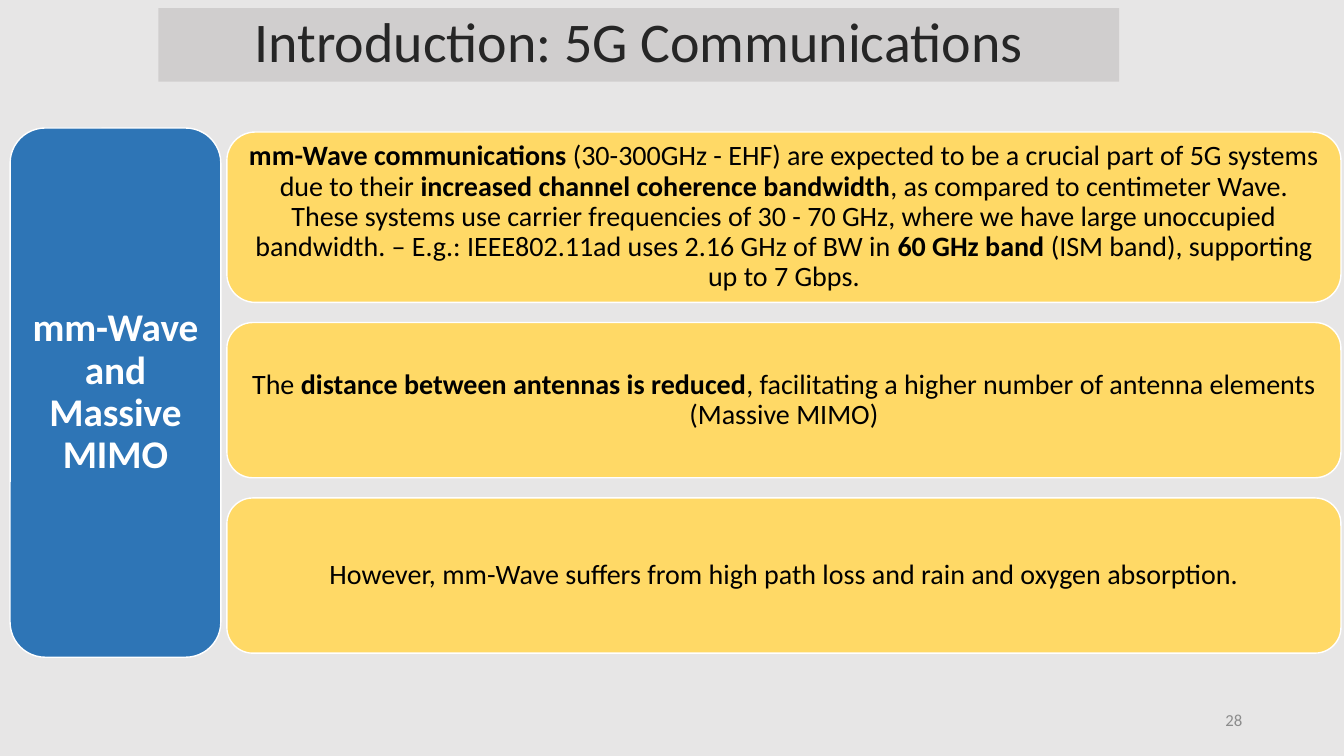
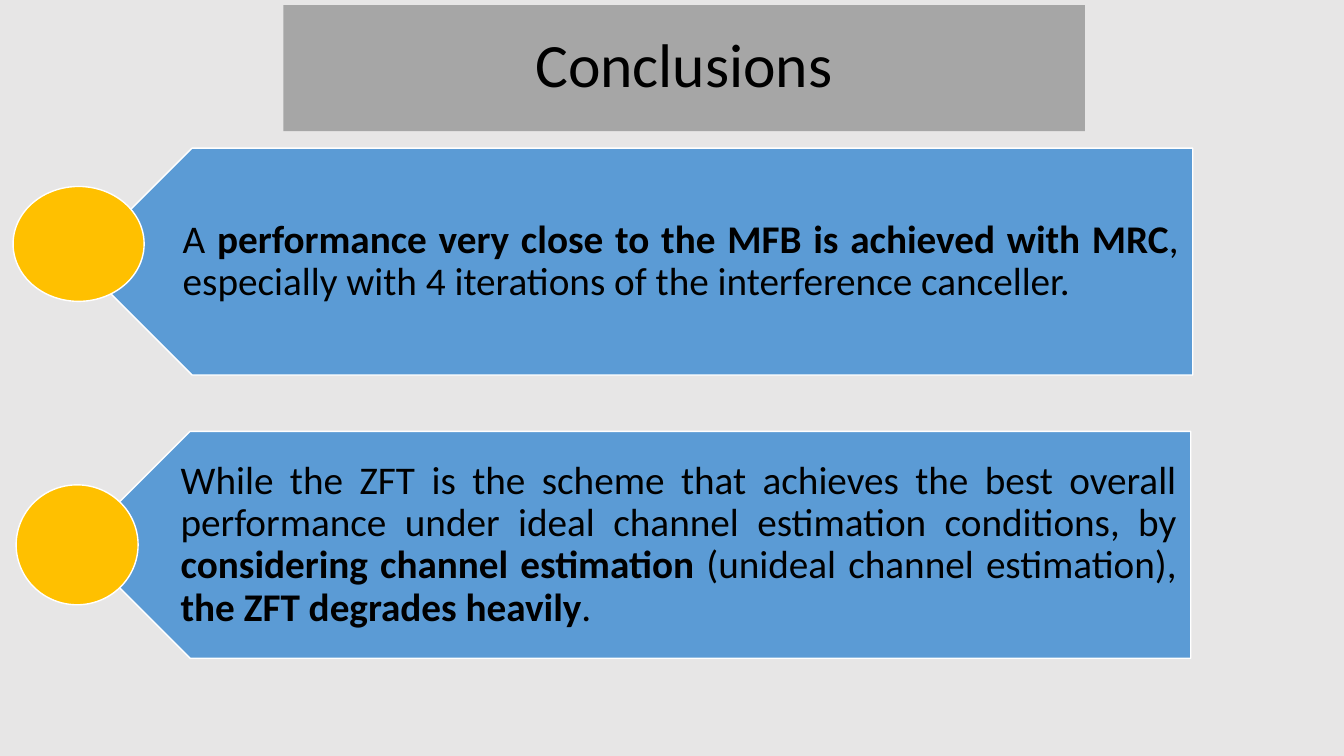
from pptx import Presentation
from pptx.dml.color import RGBColor
from pptx.enum.shapes import MSO_SHAPE
from pptx.enum.text import MSO_ANCHOR, MSO_AUTO_SIZE, PP_ALIGN
from pptx.util import Inches, Pt

ROUND_RECT = MSO_SHAPE.ROUNDED_RECTANGLE
PENTAGON = MSO_SHAPE.PENTAGON
OVAL = MSO_SHAPE.OVAL
MIDDLE = MSO_ANCHOR.MIDDLE
NO_AUTOFIT = MSO_AUTO_SIZE.NONE
CENTER, RIGHT, JUSTIFY = PP_ALIGN.CENTER, PP_ALIGN.RIGHT, PP_ALIGN.JUSTIFY

BACKGROUND = RGBColor(0xE7, 0xE6, 0xE6)
LIGHT_BAND = RGBColor(0xD0, 0xCE, 0xCE)
DARK_BAND = RGBColor(0xA6, 0xA6, 0xA6)
CHARCOAL = RGBColor(0x26, 0x26, 0x26)
GRAY = RGBColor(0x8C, 0x8C, 0x8C)
BLACK = RGBColor(0x00, 0x00, 0x00)
WHITE = RGBColor(0xFF, 0xFF, 0xFF)
YELLOW = RGBColor(0xFF, 0xD9, 0x66)
AMBER = RGBColor(0xFF, 0xC0, 0x00)
DARK_BLUE = RGBColor(0x2E, 0x75, 0xB6)
BLUE = RGBColor(0x5B, 0x9B, 0xD5)
FONT = "Calibri"

CARD_GAP = 0.2
CARDS = [
    (1.69, 0.08, "**mm-Wave communications **(30-300GHz - EHF) are expected to be a "
     "crucial part of 5G systems due to their **increased channel coherence "
     "bandwidth**, as compared to centimeter Wave. These systems use carrier "
     "frequencies of 30 - 70 GHz, where we have large unoccupied bandwidth. – E.g.: "
     "IEEE802.11ad uses 2.16 GHz of BW in **60 GHz band **(ISM band), supporting "
     "up to 7 Gbps."),
    (1.54, 0.07, "The **distance between antennas is reduced**, facilitating a higher "
     "number of antenna elements (Massive MIMO)"),
    (1.54, 0.07, "However, mm-Wave suffers from high path loss and rain and oxygen "
     "absorption."),
]
# Arrow position, circle box, text
CONCLUSIONS = [
    ((0.78, 1.47), (0.13, 1.85, 1.3, 1.14),
     "A **performance very close to the MFB is achieved with MRC**, especially with "
     "4 iterations of the interference canceller."),
    ((0.76, 4.28), (0.16, 4.81, 1.21, 1.19),
     "While the ZFT is the scheme that achieves the best overall performance under "
     "ideal channel estimation conditions, by **considering channel estimation "
     "**(unideal channel estimation), **the ZFT degrades heavily**."),
]


def write(tf, text, size, color, align=CENTER, margins=(0.1, 0.05, 0.1, 0.05)):
    """Fill a frame with one paragraph; **marks** enclose bold text."""
    tf.word_wrap = True
    tf.auto_size = NO_AUTOFIT
    tf.vertical_anchor = MIDDLE
    (tf.margin_left, tf.margin_top,
     tf.margin_right, tf.margin_bottom) = map(Inches, margins)
    p = tf.paragraphs[0]
    p.alignment = align
    p.line_spacing = 0.9
    p.font.name = FONT
    p.font.size = Pt(size)
    p.font.color.rgb = color
    for i, part in enumerate(text.split("**")):
        if part:
            r = p.add_run()
            r.text = part
            r.font.bold = i % 2 == 1


def add_box(slide, kind, box, fill):
    sp = slide.shapes.add_shape(kind, *map(Inches, box))
    sp.shadow.inherit = False
    sp.fill.solid()
    sp.fill.fore_color.rgb = fill
    sp.line.color.rgb = WHITE
    sp.line.width = Pt(1)
    return sp


def add_titled_slide(prs, text, box, size, color, band):
    slide = prs.slides.add_slide(prs.slide_layouts[5])
    title = slide.shapes.title
    title.left, title.top, title.width, title.height = map(Inches, box)
    title.fill.solid()
    title.fill.fore_color.rgb = band
    write(title.text_frame, text, size, color)
    return slide


def add_page_number(slide, number):
    tb = slide.shapes.add_textbox(*map(Inches, (9.42, 6.95, 3, 0.4)))
    write(tb.text_frame, number, 12, GRAY, RIGHT)


def add_conclusion(slide, position, circle, text):
    arrow = add_box(slide, PENTAGON, (*position, 11.05, 2.25), BLUE)
    arrow._element.spPr.xfrm.set("flipH", "1")
    write(arrow.text_frame, text, 28, BLACK, JUSTIFY, (0.47, 0.07, 0.14, 0.07))
    add_box(slide, OVAL, circle, AMBER)


def build_introduction(prs):
    slide = add_titled_slide(prs, "Introduction: 5G Communications",
                             (1.57, 0.08, 9.53, 0.73), 40, CHARCOAL, LIGHT_BAND)
    top = 1.31
    for height, margin, text in CARDS:
        card = add_box(slide, ROUND_RECT, (2.25, top, 11.05, height), YELLOW)
        write(card.text_frame, text, 20, BLACK, margins=(margin,) * 4)
        top += height + CARD_GAP
    topic = add_box(slide, ROUND_RECT, (0.1, 1.27, 2.09, 5.25), DARK_BLUE)
    write(topic.text_frame, "**mm-Wave and Massive MIMO**", 28, WHITE,
          margins=(0.12,) * 4)
    add_page_number(slide, "28")


def build_conclusions(prs):
    slide = add_titled_slide(prs, "Conclusions", (2.81, 0.05, 7.95, 1.25),
                             44, BLACK, DARK_BAND)
    for position, circle, text in CONCLUSIONS:
        add_conclusion(slide, position, circle, text)


def main():
    prs = Presentation()
    prs.slide_width, prs.slide_height = Inches(13.33), Inches(7.5)
    background = prs.slide_master.background.fill
    background.solid()
    background.fore_color.rgb = BACKGROUND
    build_introduction(prs)
    build_conclusions(prs)
    prs.save("out.pptx")


if __name__ == "__main__":
    main()
